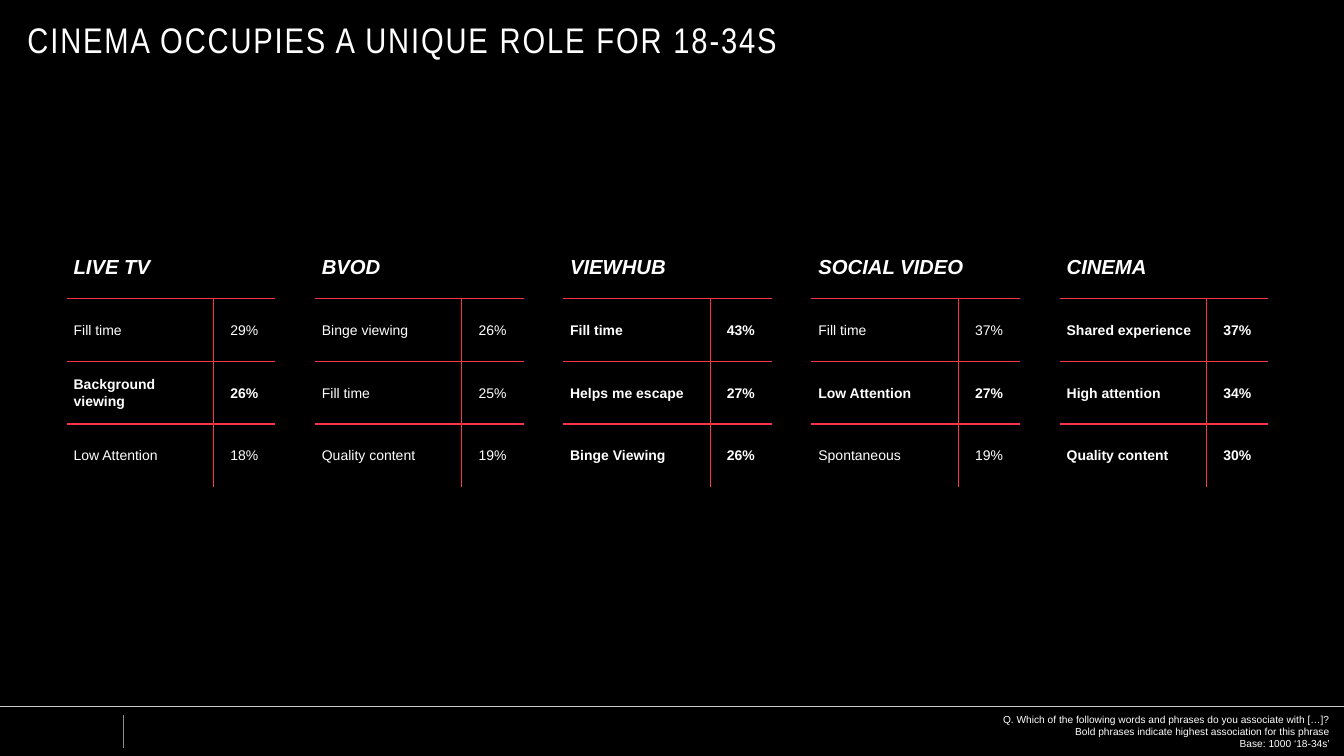
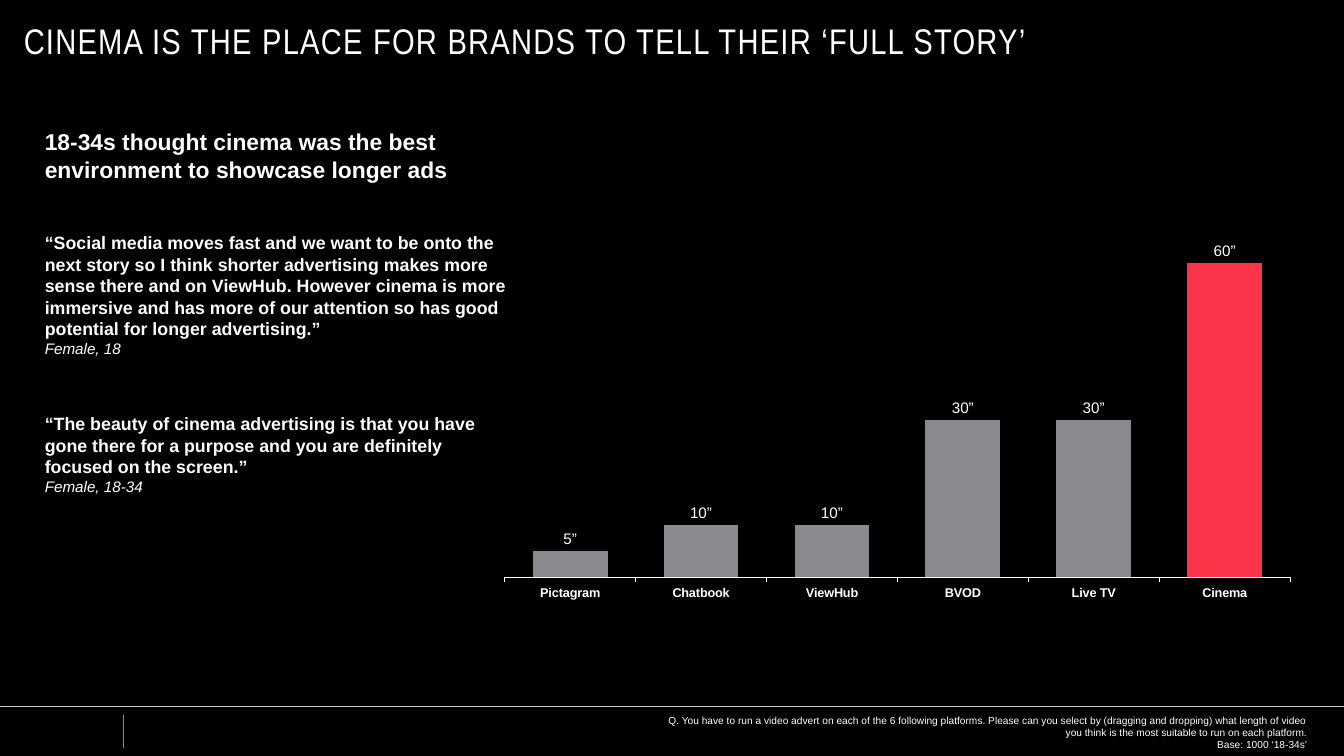
from lxml.etree import SubElement
from pptx import Presentation
from pptx.chart.data import CategoryChartData
from pptx.dml.color import RGBColor
from pptx.enum.chart import XL_CHART_TYPE, XL_LABEL_POSITION, XL_TICK_MARK
from pptx.enum.shapes import MSO_CONNECTOR
from pptx.enum.text import MSO_ANCHOR, MSO_AUTO_SIZE, PP_ALIGN
from pptx.oxml import parse_xml
from pptx.oxml.ns import nsdecls, qn
from pptx.util import Pt

SLIDE_WIDTH, SLIDE_HEIGHT = 1058.4, 595.44
BLACK, WHITE, RED = "000000", "FFFFFF", "FB3449"
GREY, PALE_GREY = "8A8A8D", "CAC8C8"
BODY_FONT, TITLE_FONT = "Arial", "Arial Narrow"
TITLE_ONLY = 5
PLAIN_TABLE_STYLE = "{2D5ABB26-0587-4C30-8999-92F81FD0307C}"


def color(hex_string):
    return RGBColor.from_string(hex_string)


def style_font(font, size, bold=False, italic=False, name=BODY_FONT):
    font.name = name
    font.size = Pt(size)
    font.bold = bold
    font.italic = italic
    font.color.rgb = color(WHITE)


def set_borders(cell, **widths):
    """Draw red borders; the keys are L, R, T and B, given in that order."""
    properties = cell._tc.get_or_add_tcPr()
    for side, width in widths.items():
        line = SubElement(properties, qn(f"a:ln{side}"), w=str(Pt(width)))
        fill = SubElement(line, qn("a:solidFill"))
        SubElement(fill, qn("a:srgbClr"), val=RED)


class Deck:
    """Holds the presentation, its style and the current slide."""

    def __init__(self):
        self.presentation = Presentation()
        self.presentation.slide_width = Pt(SLIDE_WIDTH)
        self.presentation.slide_height = Pt(SLIDE_HEIGHT)
        background = self.presentation.slide_master.background.fill
        background.solid()
        background.fore_color.rgb = color(BLACK)
        self.slide = None

    def add_slide(self, title, left, top, spacing):
        """Start a slide with its title and footer rules; spacing is between letters."""
        layout = self.presentation.slide_layouts[TITLE_ONLY]
        self.slide = self.presentation.slides.add_slide(layout)
        shape = self.slide.shapes.title
        shape.left, shape.top = Pt(left), Pt(top)
        shape.width, shape.height = Pt(978), Pt(32.4)
        self.fill_frame(shape.text_frame, [(title, 28, False, False)],
                        PP_ALIGN.LEFT, TITLE_FONT)
        shape.text_frame.vertical_anchor = MSO_ANCHOR.MIDDLE
        run = shape.text_frame.paragraphs[0].runs[0]
        run._r.get_or_add_rPr().set("spc", str(int(spacing * 100)))
        self.line(97.2, 563, 97.2, 589, GREY, 0.75)
        self.line(0, 556.6, SLIDE_WIDTH, 556.6, PALE_GREY, 0.5)

    def line(self, x1, y1, x2, y2, hex_string, width):
        connector = self.slide.shapes.add_connector(
            MSO_CONNECTOR.STRAIGHT, Pt(x1), Pt(y1), Pt(x2), Pt(y2))
        connector.line.color.rgb = color(hex_string)
        connector.line.width = Pt(width)
        SubElement(connector._element.spPr, qn("a:effectLst"))

    def fill_frame(self, frame, entries, alignment, font_name=BODY_FONT):
        """Write one paragraph per (text, size, bold, italic) entry."""
        frame.word_wrap = True
        frame.auto_size = MSO_AUTO_SIZE.NONE
        frame.margin_left = frame.margin_right = 0
        frame.margin_top = frame.margin_bottom = 0
        frame.text = "\n".join(entry[0] for entry in entries)
        for paragraph, (_, size, bold, italic) in zip(frame.paragraphs, entries):
            paragraph.alignment = alignment
            style_font(paragraph.runs[0].font, size, bold, italic, font_name)

    def text(self, left, top, width, height, entries, alignment=PP_ALIGN.LEFT):
        box = self.slide.shapes.add_textbox(Pt(left), Pt(top), Pt(width), Pt(height))
        self.fill_frame(box.text_frame, entries, alignment)

    def quote(self, top, height, words, speaker):
        self.text(35.3, top, 368, height,
                  [(words, 14, True, False), (speaker, 12, False, True)])

    def footnote(self, left, top, right, lines):
        entries = [(line, 8, False, False) for line in lines]
        self.text(left, top, right - left, 28.8, entries, PP_ALIGN.RIGHT)

    def cell(self, cell, text, size, bold, italic=False, alignment=PP_ALIGN.LEFT):
        cell.text_frame.text = text
        cell.vertical_anchor = MSO_ANCHOR.MIDDLE
        cell.margin_left = cell.margin_right = Pt(5.6)
        cell.margin_top = cell.margin_bottom = 0
        paragraph = cell.text_frame.paragraphs[0]
        paragraph.alignment = alignment
        paragraph.line_spacing = 1.07
        style_font(paragraph.runs[0].font, size, bold, italic)

    def ranking(self, left, top, heading, entries):
        """Add a table of (phrase, share, bold) rows under a merged heading."""
        widths, row_height = (115.7, 48.7), 49.5
        row_count = len(entries) + 1
        frame = self.slide.shapes.add_table(
            row_count, 2, Pt(left), Pt(top), Pt(sum(widths)), Pt(row_height * row_count))
        table = frame.table
        table._tbl.tblPr.find(qn("a:tableStyleId")).text = PLAIN_TABLE_STYLE
        table.first_row = table.horz_banding = False
        for column, width in zip(table.columns, widths):
            column.width = Pt(width)
        for row in table.rows:
            row.height = Pt(row_height)

        table.cell(0, 0).merge(table.cell(0, 1))
        self.cell(table.cell(0, 0), heading, 16, True, True)
        set_borders(table.cell(0, 0), B=1.5)
        set_borders(table.cell(0, 1), B=1.5)
        for row, (phrase, share, bold) in enumerate(entries, 1):
            phrase_cell, share_cell = table.cell(row, 0), table.cell(row, 1)
            self.cell(phrase_cell, phrase, 11, bold)
            self.cell(share_cell, share, 11, bold, alignment=PP_ALIGN.CENTER)
            rules = {"T": 1.5} if row == len(entries) else {"T": 1.5, "B": 1.5}
            set_borders(phrase_cell, R=0.5, **rules)
            set_borders(share_cell, L=0.5, **rules)
        for cell in table.iter_cells():
            cell.fill.background()

    def column_chart(self, left, top, width, height, lengths, highlight):
        """Plot lengths in seconds, right to left, with one column in red."""
        data = CategoryChartData()
        data.categories = list(lengths)
        data.add_series("Series 1", list(lengths.values()))
        chart = self.slide.shapes.add_chart(
            XL_CHART_TYPE.COLUMN_CLUSTERED, Pt(left), Pt(top), Pt(width), Pt(height),
            data).chart
        chart.has_title = chart.has_legend = False
        style_font(chart.font, 10)

        category_axis = chart.category_axis
        category_axis.reverse_order = True
        category_axis.has_major_gridlines = False
        category_axis.major_tick_mark = XL_TICK_MARK.OUTSIDE
        category_axis.format.line.color.rgb = color(WHITE)
        category_axis.format.line.width = Pt(0.75)
        style_font(category_axis.tick_labels.font, 10, bold=True)
        value_axis = chart.value_axis
        value_axis.minimum_scale, value_axis.maximum_scale = 0, 100
        value_axis.has_major_gridlines = False
        value_axis.visible = False

        plot = chart.plots[0]
        plot.gap_width = 75
        plot.vary_by_categories = False
        series = plot.series[0]
        for index, category in enumerate(lengths):
            fill = series.points[index].format.fill
            fill.solid()
            fill.fore_color.rgb = color(RED if category == highlight else GREY)
        labels = series.data_labels
        labels.show_value = True
        labels.position = XL_LABEL_POSITION.OUTSIDE_END
        labels.number_format = '0"”"'
        labels.number_format_is_linked = False
        style_font(labels.font, 12)
        self.place_plot(chart, x=0.037, y=0.047, w=0.962, h=0.778)

    def place_plot(self, chart, **fractions):
        """Fix the inner plot area as fractions of the chart."""
        area = chart._chartSpace.find(f".//{qn('c:plotArea')}")
        for layout in area.findall(qn("c:layout")):
            area.remove(layout)
        modes = "".join(f'<c:{axis}Mode val="edge"/>' for axis in "xy")
        sizes = "".join(f'<c:{key} val="{value}"/>' for key, value in fractions.items())
        area.insert(0, parse_xml(
            f'<c:layout {nsdecls("c")}><c:manualLayout><c:layoutTarget val="inner"/>'
            f'{modes}{sizes}</c:manualLayout></c:layout>'))


def add_roles_slide(deck):
    deck.add_slide("CINEMA OCCUPIES A UNIQUE ROLE FOR 18-34S", 21.6, 14.4, 1.5)
    rankings = {
        "LIVE TV": [("Fill time", "29%", False),
                    ("Background viewing", "26%", True),
                    ("Low Attention", "18%", False)],
        "BVOD": [("Binge viewing", "26%", False),
                 ("Fill time", "25%", False),
                 ("Quality content", "19%", False)],
        "VIEWHUB": [("Fill time", "43%", True),
                    ("Helps me escape", "27%", True),
                    ("Binge Viewing", "26%", True)],
        "SOCIAL VIDEO": [("Fill time", "37%", False),
                         ("Low Attention", "27%", True),
                         ("Spontaneous", "19%", False)],
        "CINEMA": [("Shared experience", "37%", True),
                   ("High attention", "34%", True),
                   ("Quality content", "30%", True)],
    }
    for index, (heading, entries) in enumerate(rankings.items()):
        deck.ranking(52.4 + index * 195.5, 185.6, heading, entries)
    deck.footnote(436.3, 561.6, 1047.3, [
        "Q. Which of the following words and phrases do you associate with […]?",
        "Bold phrases indicate highest association for this phrase",
        "Base: 1000 ‘18-34s’",
    ])


def add_lengths_slide(deck):
    deck.add_slide("CINEMA IS THE PLACE FOR BRANDS TO TELL THEIR ‘FULL STORY’", 18.7, 15.8, 1)
    lengths = {"Cinema": 60, "Live TV": 30, "BVOD": 30,
               "ViewHub": 10, "Chatbook": 10, "Pictagram": 5}
    deck.column_chart(373.7, 17.3, 643, 530, lengths, highlight="Cinema")
    deck.text(35.3, 100.8, 338.4, 41, [
        ("18-34s thought cinema was the best environment to showcase longer ads",
         18, True, False)])
    deck.quote(182.9, 99.4,
               "“Social media moves fast and we want to be onto the next story so I think "
               "shorter advertising makes more sense there and on ViewHub. However cinema "
               "is more immersive and has more of our attention so has good potential for "
               "longer advertising.”", "Female, 18")
    deck.quote(325.4, 65.5,
               "“The beauty of cinema advertising is that you have gone there for a purpose "
               "and you are definitely focused on the screen.”", "Female, 18-34")
    deck.footnote(514.8, 562.3, 1029.6, [
        "Q. You have to run a video advert on each of the 6 following platforms. Please can "
        "you select by (dragging and dropping) what length of video you think is the most "
        "suitable to run on each platform.",
        "Base: 1000 ‘18-34s’",
    ])


def main():
    deck = Deck()
    add_roles_slide(deck)
    add_lengths_slide(deck)
    deck.presentation.save("out.pptx")


if __name__ == "__main__":
    main()
